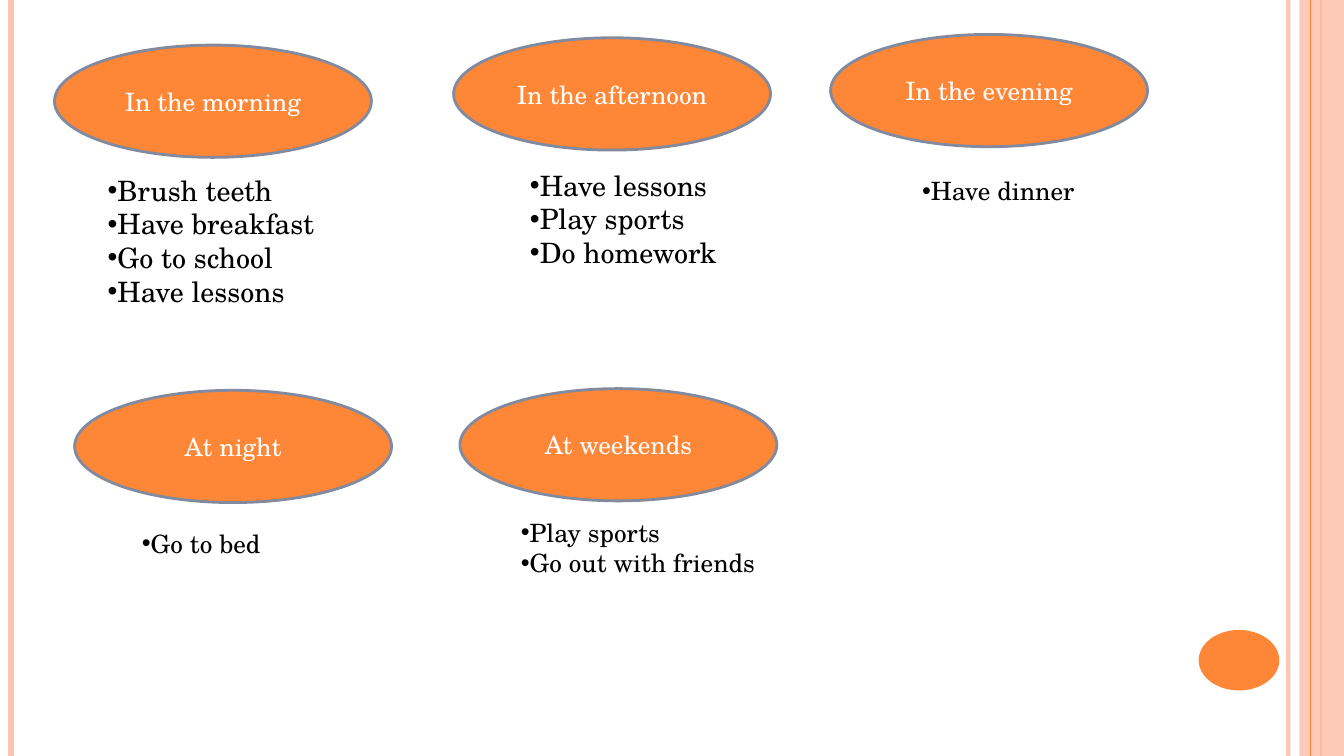
from dataclasses import dataclass

from pptx import Presentation
from pptx.dml.color import RGBColor
from pptx.enum.shapes import MSO_CONNECTOR, MSO_SHAPE
from pptx.enum.text import MSO_ANCHOR, PP_ALIGN
from pptx.oxml.ns import qn
from pptx.util import Pt
from lxml.etree import SubElement

# Content: heading, oval (left, top), activity list (left, top, width, height), text size
TIMES_OF_DAY = [
    ("In the morning", (38.9, 32.2), (69.8, 120.2, 165, 170), 20,
     ["Brush teeth", "Have breakfast", "Go to school", "Have lessons"]),
    ("In the afternoon", (324, 27), (371.5, 116.6, 150, 145), 20,
     ["Have lessons", "Play sports", "Do homework"]),
    ("In the evening", (593.3, 24.6), (651.6, 121.7, 130, 51), 18,
     ["Have dinner"]),
    ("At night", (53.3, 278.8), (94.3, 373.7, 115, 29), 18,
     ["Go to bed"]),
    ("At weekends", (328.5, 277.6), (365, 365.8, 184, 73), 18,
     ["Play sports", "Go out with friends"]),
]


@dataclass(frozen=True)
class Theme:
    orange: str = "FE8637"
    peach: str = "FEC3AE"
    outline: str = "818A9E"
    white: str = "FFFFFF"
    black: str = "000000"
    font: str = "TeX Gyre Schola"
    heading_size: int = 18


THEME = Theme()
WIDTH, HEIGHT = 960, 540
OVAL_WIDTH, OVAL_HEIGHT = 226.4, 80.2

# Side decoration, back to front: x, colour, line width, opacity in percent
LINES_BEHIND_BAND = [
    (920.2, THEME.peach, 3, 93),
    (8, THEME.peach, 4.5, 100),
    (943.8, THEME.orange, 1.5, 100),
]
LINES_OVER_BAND = [(936, THEME.orange, 0.75, 100)]
BAND = (928.2, 0, 31.8, HEIGHT)
BADGE = (856.2, 450, 57.6, 43.2)

presentation = Presentation()
presentation.slide_width, presentation.slide_height = Pt(WIDTH), Pt(HEIGHT)
slide = presentation.slides.add_slide(presentation.slide_layouts[6])


def set_opacity(fill, percent):
    colour = fill._xPr.find(".//" + qn("a:srgbClr"))
    SubElement(colour, qn("a:alpha"), val=str(percent * 1000))


def add_side_line(x, colour, width, opacity):
    side_line = slide.shapes.add_connector(
        MSO_CONNECTOR.STRAIGHT, Pt(x), Pt(0), Pt(x), Pt(HEIGHT))
    side_line.line.width = Pt(width)
    side_line.line.color.rgb = RGBColor.from_string(colour)
    if opacity < 100:
        set_opacity(side_line.line.fill, opacity)
    SubElement(side_line._element.spPr, qn("a:effectLst"))


def add_filled(kind, box, colour):
    filled = slide.shapes.add_shape(kind, *map(Pt, box))
    filled.shadow.inherit = False
    filled.fill.solid()
    filled.fill.fore_color.rgb = RGBColor.from_string(colour)
    filled.line.fill.background()
    return filled


def write(paragraph, text, size, colour):
    run = paragraph.add_run()
    run.text = text
    for name, value in {"name": THEME.font, "size": Pt(size)}.items():
        setattr(run.font, name, value)
    run.font.color.rgb = RGBColor.from_string(colour)


def add_heading(text, corner):
    oval = add_filled(MSO_SHAPE.OVAL, (*corner, OVAL_WIDTH, OVAL_HEIGHT), THEME.orange)
    oval.line.color.rgb = RGBColor.from_string(THEME.outline)
    oval.line.width = Pt(2)
    oval.text_frame.vertical_anchor = MSO_ANCHOR.MIDDLE
    paragraph = oval.text_frame.paragraphs[0]
    paragraph.alignment = PP_ALIGN.CENTER
    write(paragraph, text, THEME.heading_size, THEME.white)


def add_activities(activities, box, size):
    frame = slide.shapes.add_textbox(*map(Pt, box)).text_frame
    for name, value in {"word_wrap": True, "margin_right": 0}.items():
        setattr(frame, name, value)
    for number, activity in enumerate(activities):
        paragraph = frame.add_paragraph() if number else frame.paragraphs[0]
        properties = paragraph._p.get_or_add_pPr()
        SubElement(properties, qn("a:buFont"), typeface="Arial")
        SubElement(properties, qn("a:buChar"), char="•")
        write(paragraph, activity, size, THEME.black)


# Side decoration
for side_line_values in LINES_BEHIND_BAND:
    add_side_line(*side_line_values)
band = add_filled(MSO_SHAPE.RECTANGLE, BAND, THEME.peach)
set_opacity(band.fill, 87)
for side_line_values in LINES_OVER_BAND:
    add_side_line(*side_line_values)
add_filled(MSO_SHAPE.OVAL, BADGE, THEME.orange)

# Headings with their activities
for heading, corner, list_box, list_size, activities in TIMES_OF_DAY:
    add_heading(heading, corner)
    add_activities(activities, list_box, list_size)

presentation.save("out.pptx")
